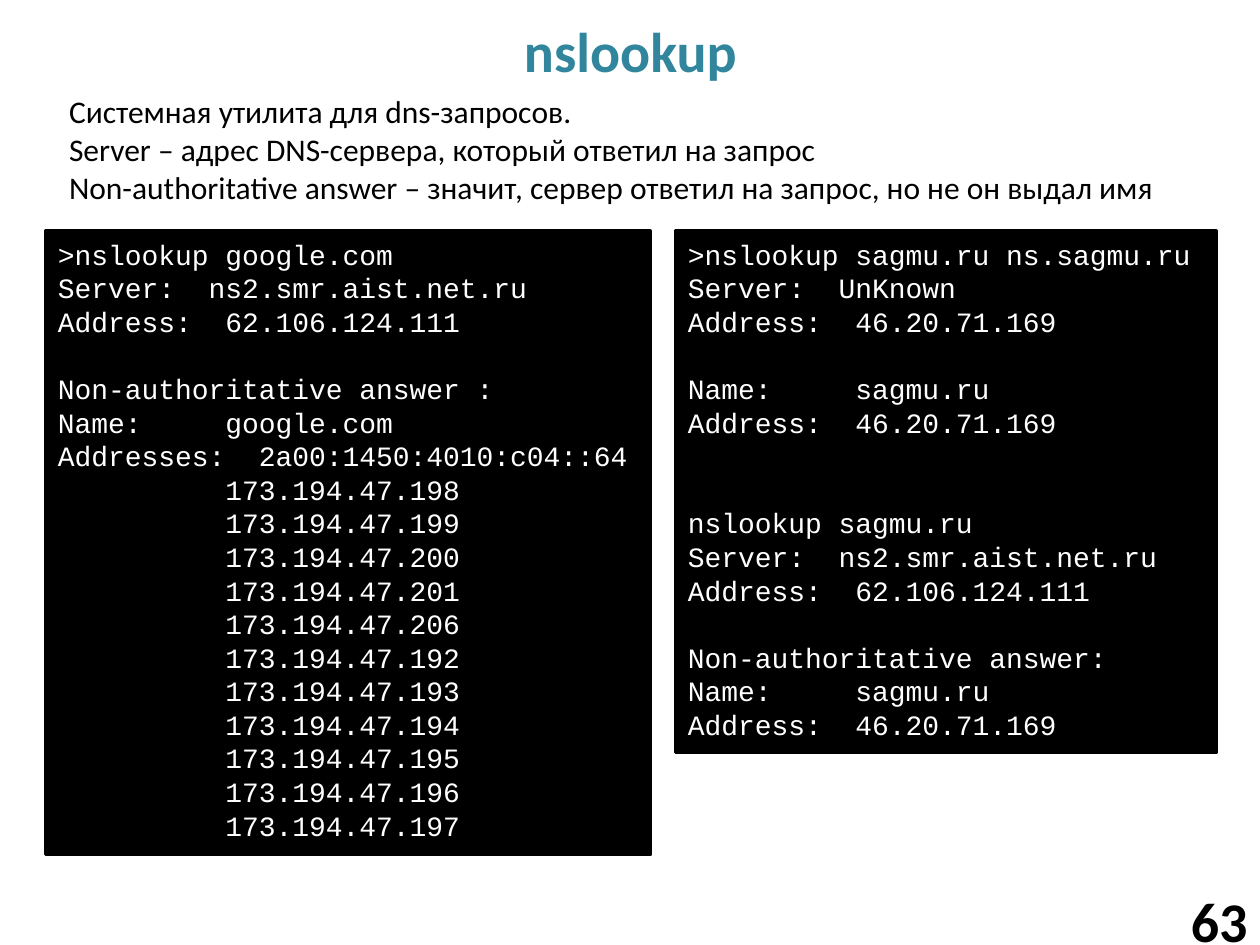
from pptx import Presentation
from pptx.dml.color import RGBColor
from pptx.enum.shapes import MSO_SHAPE as Shape
from pptx.enum.text import MSO_ANCHOR as Anchor, PP_ALIGN as Align
from pptx.util import Pt

TITLE_COLOR = "31859C"
BLACK = "000000"
WHITE = "FFFFFF"
CODE_LINE = 19.2

DESCRIPTION = [
    "Системная утилита для dns-запросов.",
    "Server – адрес DNS-сервера, который ответил на запрос",
    "Non-authoritative answer – значит, сервер ответил на запрос, но не он выдал имя",
]
HOST_NUMBERS = [198, 199, 200, 201, 206, *range(192, 198)]
PUBLIC_LOOKUP = [
    ">nslookup google.com",
    "Server:  ns2.smr.aist.net.ru",
    "Address:  62.106.124.111",
    "",
    "Non-authoritative answer :",
    "Name:     google.com",
    "Addresses:  2a00:1450:4010:c04::64",
    *[f"          173.194.47.{number}" for number in HOST_NUMBERS],
]
SAGMU_LOOKUP = [
    ">nslookup sagmu.ru ns.sagmu.ru",
    "Server:  UnKnown",
    "Address:  46.20.71.169",
    "",
    "Name:     sagmu.ru",
    "Address:  46.20.71.169",
    "",
    "",
    "nslookup sagmu.ru",
    "Server:  ns2.smr.aist.net.ru",
    "Address:  62.106.124.111",
    "",
    "Non-authoritative answer:",
    "Name:     sagmu.ru",
    "Address:  46.20.71.169",
]


def color(value):
    return RGBColor.from_string(value)


class SlideBuilder:
    text_font = "Calibri"
    code_font = "Courier New"

    def __init__(self, presentation):
        self.slide = presentation.slides.add_slide(presentation.slide_layouts[5])

    def set_lines(self, shape, lines, font, size, ink, align=Align.LEFT, anchor=Anchor.TOP, bold=False):
        frame = shape.text_frame
        frame.word_wrap = True
        frame.vertical_anchor = anchor
        gap = 0
        paragraph = None
        for line in lines:
            if not line:
                gap += CODE_LINE
                continue
            paragraph = frame.add_paragraph() if paragraph else frame.paragraphs[0]
            paragraph.text = line
            paragraph.alignment = align
            paragraph.space_before = Pt(gap)
            gap = 0
            for run in paragraph.runs:
                run.font.name = font
                run.font.size = Pt(size)
                run.font.bold = bold
                run.font.color.rgb = color(ink)

    def title(self, text, left, top, width, height):
        shape = self.slide.shapes.title
        shape.left, shape.top = Pt(left), Pt(top)
        shape.width, shape.height = Pt(width), Pt(height)
        self.set_lines(shape, [text], self.text_font, 32, TITLE_COLOR, Align.CENTER, Anchor.MIDDLE, True)

    def text(self, lines, left, top, width, height, size, **style):
        shape = self.slide.shapes.add_textbox(Pt(left), Pt(top), Pt(width), Pt(height))
        self.set_lines(shape, lines, self.text_font, size, BLACK, **style)

    def console(self, lines, left, top, width, height):
        shape = self.slide.shapes.add_shape(Shape.RECTANGLE, Pt(left), Pt(top), Pt(width), Pt(height))
        shape.shadow.inherit = False
        shape.fill.solid()
        shape.fill.fore_color.rgb = color(BLACK)
        shape.line.color.rgb = color(BLACK)
        shape.line.width = Pt(2)
        self.set_lines(shape, lines, self.code_font, 16, WHITE)


def main():
    presentation = Presentation()
    presentation.slide_width, presentation.slide_height = Pt(720), Pt(540)
    builder = SlideBuilder(presentation)
    builder.title("nslookup", 20, 3.5, 680.5, 50)
    builder.text(["63"], 638, 511, 82, 29, 32, align=Align.RIGHT, anchor=Anchor.MIDDLE, bold=True)
    builder.console(PUBLIC_LOOKUP, 26, 132, 345.6, 356.4)
    builder.console(SAGMU_LOOKUP, 386, 132, 309, 298)
    builder.text(DESCRIPTION, 32.4, 49, 652.3, 72.7, 18)
    presentation.save("out.pptx")


if __name__ == "__main__":
    main()
